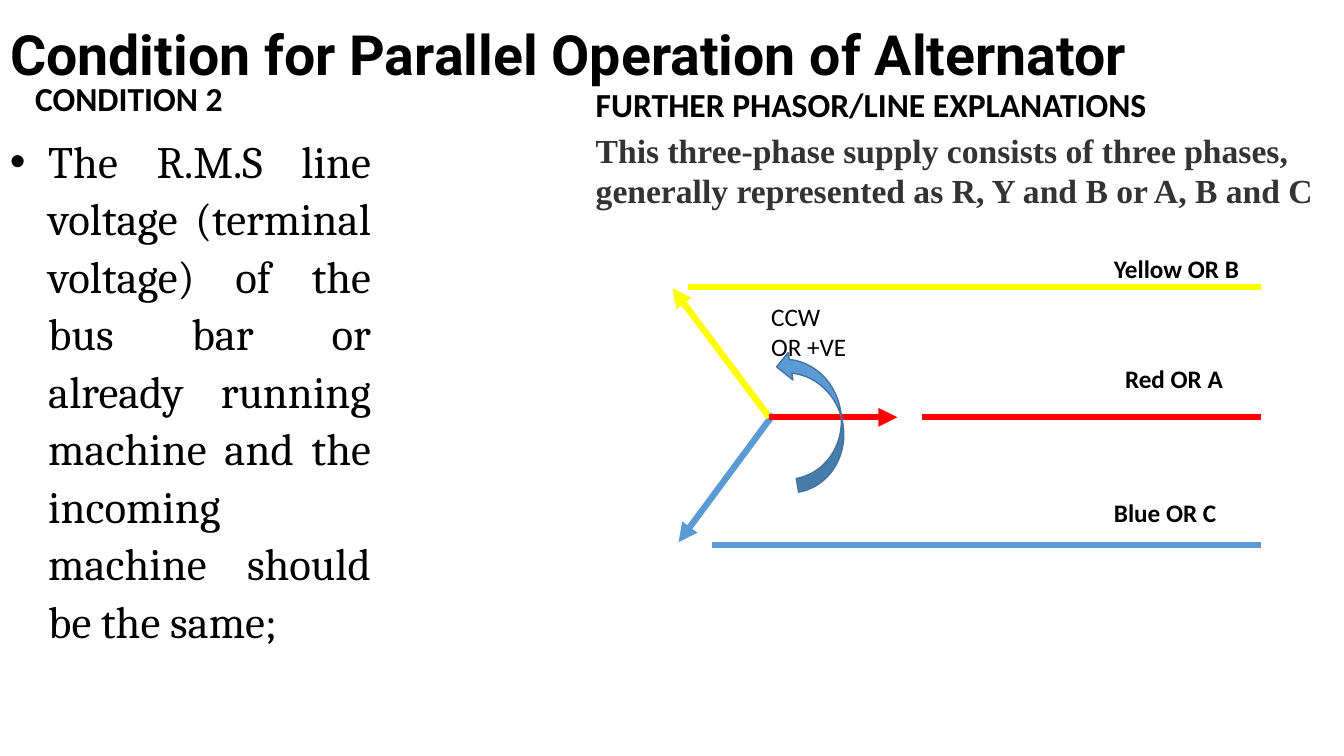
from dataclasses import dataclass

from lxml import etree
from pptx import Presentation
from pptx import util as u
from pptx.dml.color import RGBColor
from pptx.enum import shapes, text
from pptx.oxml import ns


@dataclass(frozen=True)
class Theme:
    ink: str = "000000"
    gray: str = "333333"
    red: str = "FF0000"
    yellow: str = "FFFF00"
    blue: str = "5B9BD5"
    outline: str = "43739E"
    title_font: str = "Roboto"
    body_font: str = "Cambria"
    note_font: str = "Times New Roman"
    label_font: str = "Calibri"
    title_size: float = 39.6
    body_size: float = 32
    heading_size: float = 24
    label_size: float = 18
    line_width: float = 4.5


class PhasorSlide:
    def __init__(self, deck, theme):
        self.theme = theme
        self.page = deck.slides.add_slide(deck.slide_layouts[5])

    def set_text(self, box, words, font, size, bold=True, color=None,
                 anchor=text.MSO_ANCHOR.TOP, spacing=1.0):
        """Fill a box with one formatted paragraph and return the paragraph."""
        frame = box.text_frame
        frame.text = words
        frame.word_wrap = True
        frame.auto_size = text.MSO_AUTO_SIZE.NONE
        frame.vertical_anchor = anchor
        para = frame.paragraphs[0]
        para.alignment = text.PP_ALIGN.LEFT
        para.line_spacing = spacing
        for span in para.runs:
            span.font.name = font
            span.font.size = u.Pt(size)
            span.font.bold = bold
            span.font.color.rgb = RGBColor.from_string(color or self.theme.ink)
        return para

    def title(self, words, left, top, width, height):
        box = self.page.shapes.title
        box.left, box.top = u.Inches(left), u.Inches(top)
        box.width, box.height = u.Inches(width), u.Inches(height)
        self.set_text(box, words, self.theme.title_font, self.theme.title_size,
                      anchor=text.MSO_ANCHOR.MIDDLE, spacing=1.07)

    def text_box(self, words, left, top, width, height, font, size, **style):
        box = self.page.shapes.add_textbox(
            u.Inches(left), u.Inches(top), u.Inches(width), u.Inches(height))
        return self.set_text(box, words, font, size, **style)

    def heading(self, words, left, top, width, height, spacing):
        self.text_box(words, left, top, width, height, self.theme.label_font,
                      self.theme.heading_size, anchor=text.MSO_ANCHOR.BOTTOM,
                      spacing=spacing)

    def label(self, words, left, top, width, height=0.4, bold=True):
        self.text_box(words, left, top, width, height, self.theme.label_font,
                      self.theme.label_size, bold=bold)

    def bullet(self, words, left, top, width, height):
        para = self.text_box(words, left, top, width, height, self.theme.body_font,
                             self.theme.body_size, bold=False, spacing=1.07)
        para.alignment = text.PP_ALIGN.JUSTIFY
        props = para._p.get_or_add_pPr()
        indent = u.Inches(0.38)
        props.set("marL", str(indent))
        props.set("indent", str(-indent))
        etree.SubElement(props, ns.qn("a:buFont")).set("typeface", "Arial")
        etree.SubElement(props, ns.qn("a:buChar")).set("char", "•")

    def line(self, start, end, color, arrow=False):
        points = [u.Inches(value) for value in (*start, *end)]
        link = self.page.shapes.add_connector(shapes.MSO_CONNECTOR.STRAIGHT, *points)
        link.line.color.rgb = RGBColor.from_string(color)
        link.line.width = u.Pt(self.theme.line_width)
        props = link._element.spPr
        if arrow:
            tip = etree.SubElement(props.get_or_add_ln(), ns.qn("a:tailEnd"))
            tip.set("type", "triangle")
        etree.SubElement(props, ns.qn("a:effectLst"))

    def rotation_arrow(self, left, top, width, height, angle):
        arrow = self.page.shapes.add_shape(
            shapes.MSO_SHAPE.CURVED_UP_ARROW,
            u.Inches(left), u.Inches(top), u.Inches(width), u.Inches(height))
        arrow.rotation = angle
        arrow.shadow.inherit = False
        arrow.fill.solid()
        arrow.fill.fore_color.rgb = RGBColor.from_string(self.theme.blue)
        arrow.line.color.rgb = RGBColor.from_string(self.theme.outline)
        arrow.line.width = u.Pt(1)


def main():
    deck = Presentation()
    deck.slide_width, deck.slide_height = u.Inches(13.33), u.Inches(7.5)
    theme = Theme()
    slide = PhasorSlide(deck, theme)

    slide.title("Condition for Parallel Operation of Alternator", 0, 0.06, 13.33, 0.89)
    slide.heading("CONDITION 2", 0.25, 0.74, 5.56, 0.49, spacing=0.9)
    slide.bullet("The R.M.S line voltage (terminal voltage) of the bus bar or already "
                 "running machine and the incoming machine should be the same;",
                 0, 1.24, 3.78, 6.26)
    slide.heading("FURTHER PHASOR/LINE EXPLANATIONS", 5.81, 0.84, 7.52, 0.44, spacing=0.8)
    slide.text_box("This three-phase supply consists of three phases, generally "
                   "represented as R, Y and B or A, B and C", 5.81, 1.24, 7.52, 0.91,
                   theme.note_font, theme.heading_size, color=theme.gray)

    center, line_end = (7.63, 4.14), 12.51
    phases = [
        (theme.blue, (7.67, 4.11), (6.73, 5.38), (7.06, 5.41)),
        (theme.yellow, center, (6.67, 2.86), (6.82, 2.85)),
        (theme.red, center, (8.9, 4.14), (9.14, 4.14)),
    ]
    for color, origin, tip, line_start in phases:
        slide.line(origin, tip, color, arrow=True)
        slide.line(line_start, (line_end, line_start[1]), color)

    slide.rotation_arrow(7.37, 3.87, 1.4, 0.55, angle=260)
    slide.label("CCW OR +VE", 7.55, 2.94, 1.03, 0.71, bold=False)
    slide.label("Red OR A", 11.06, 3.56, 1.26)
    slide.label("Yellow OR B", 10.95, 2.46, 1.56)
    slide.label("Blue OR C", 10.95, 4.88, 1.56)

    deck.save("out.pptx")


if __name__ == "__main__":
    main()
